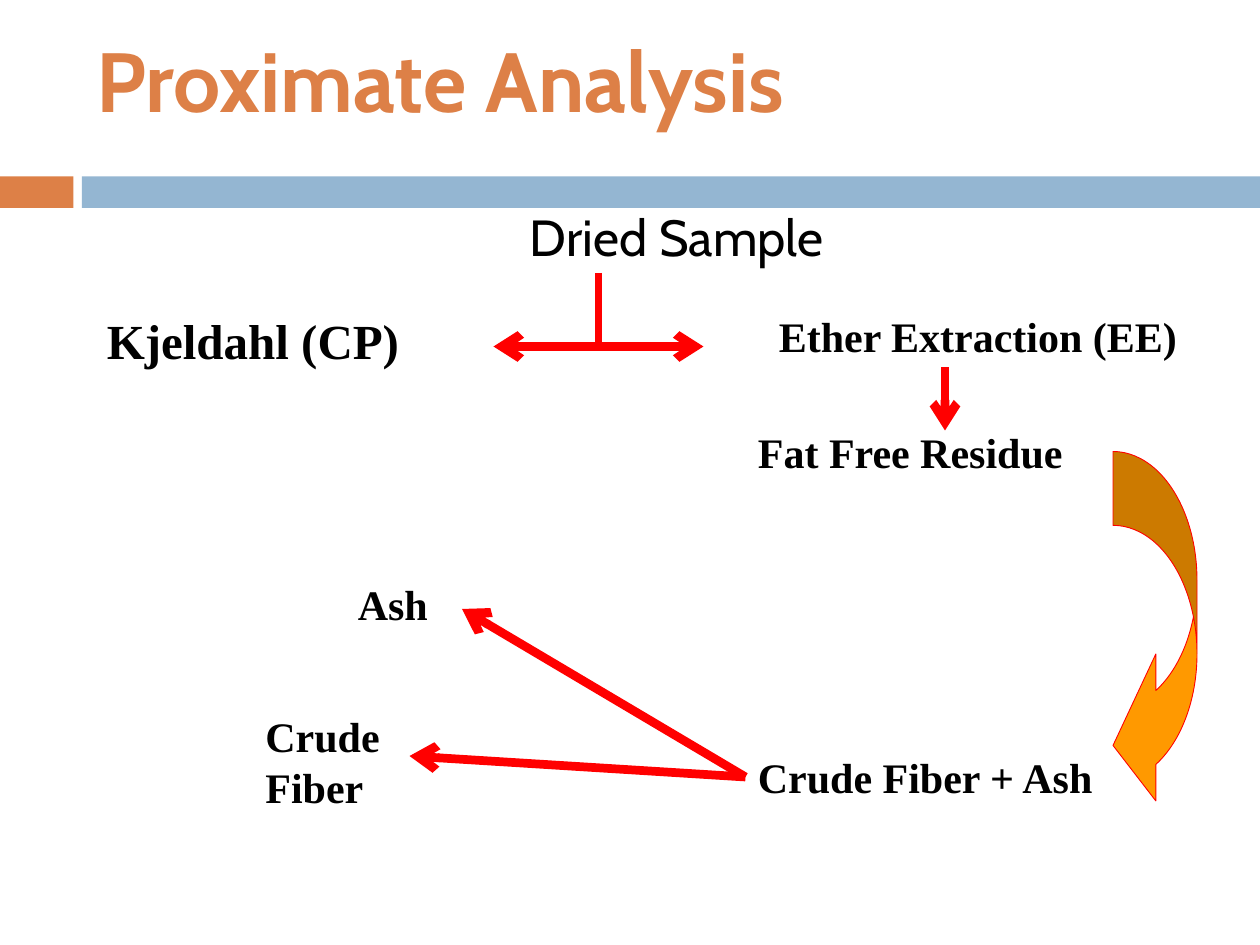
from dataclasses import dataclass

from lxml.etree import SubElement
from pptx import Presentation
from pptx.dml.color import RGBColor
from pptx.enum.shapes import MSO_CONNECTOR, MSO_SHAPE
from pptx.enum.text import MSO_ANCHOR
from pptx.oxml.ns import qn
from pptx.util import Inches, Pt


@dataclass(frozen=True)
class Theme:
    orange: str = "DD8047"
    blue: str = "94B6D2"
    black: str = "000000"
    red: str = "FF0000"
    amber: str = "FF9900"
    heading_font: str = "Cabin"
    label_font: str = "Times New Roman"
    title_size: float = 48
    sample_size: float = 29
    large_label_size: float = 28
    label_size: float = 24
    arrow_width: float = 5
    stem_width: float = 4.5
    outline_width: float = 0.5


THEME = Theme()
COLUMNS, ROWS = 120, 90
CELL = Inches(10) // COLUMNS


def grid(*cells):
    """Convert counts of grid cells to lengths."""
    return [round(cell * CELL) for cell in cells]


def add_text(slide, text, box, size=THEME.label_size, font=THEME.label_font,
             color=THEME.black, bold=True, anchor=MSO_ANCHOR.TOP, indent=0):
    """Add a wrapped text box; box and indent are in grid cells."""
    shape = slide.shapes.add_textbox(*grid(*box))
    frame = shape.text_frame
    frame.word_wrap = True
    frame.vertical_anchor = anchor
    frame.text = text
    paragraph = frame.paragraphs[0]
    if indent:
        paragraph._p.get_or_add_pPr().set("marL", str(grid(indent)[0]))
    run_font = paragraph.runs[0].font
    run_font.name = font
    run_font.size = Pt(size)
    run_font.bold = bold
    run_font.color.rgb = RGBColor.from_string(color)


def add_filled_shape(slide, kind, box, fill, outline=None):
    shape = slide.shapes.add_shape(kind, *grid(*box))
    shape.shadow.inherit = False
    shape.fill.solid()
    shape.fill.fore_color.rgb = RGBColor.from_string(fill)
    if outline:
        shape.line.color.rgb = RGBColor.from_string(outline)
        shape.line.width = Pt(THEME.outline_width)
    else:
        shape.line.fill.background()
    return shape


def add_line(slide, start, end, width=THEME.arrow_width, arrowheads=("tailEnd",)):
    connector = slide.shapes.add_connector(
        MSO_CONNECTOR.STRAIGHT, *grid(*start, *end))
    connector.line.color.rgb = RGBColor.from_string(THEME.red)
    connector.line.width = Pt(width)
    properties = connector._element.spPr
    for arrowhead in arrowheads:
        SubElement(properties.find(qn("a:ln")), qn(f"a:{arrowhead}"), type="arrow")
    SubElement(properties, qn("a:effectLst"))


def add_header(slide):
    add_filled_shape(slide, MSO_SHAPE.RECTANGLE, (0, 16.8, 7, 3), THEME.orange)
    add_filled_shape(slide, MSO_SHAPE.RECTANGLE, (7.8, 16.8, 112.2, 3), THEME.blue)
    add_text(slide, "Proximate Analysis", (8, 0, 102, 15), THEME.title_size,
             THEME.heading_font, THEME.orange, anchor=MSO_ANCHOR.MIDDLE)


def add_labels(slide):
    add_text(slide, "Dried Sample", (9, 19, 102, 9), THEME.sample_size,
             THEME.heading_font, bold=False, indent=40.3)
    add_text(slide, "Kjeldahl (CP)", (9, 29, 40, 6.8), THEME.large_label_size)
    for text, box in (
        ("Ether Extraction (EE)", (73, 29, 47, 10.8)),
        ("Fat Free Residue", (71, 40, 45, 6)),
        ("Crude Fiber + Ash", (71, 71, 44, 6)),
        ("Ash", (32.9, 54.5, 10.8, 6)),
        ("Crude Fiber", (24.1, 67.1, 19, 10.9)),
    ):
        add_text(slide, text, box)


def add_flow(slide):
    add_line(slide, (57, 26), (57, 33), THEME.stem_width, arrowheads=())
    add_line(slide, (47, 33), (67, 33), arrowheads=("headEnd", "tailEnd"))
    add_line(slide, (90, 35), (90, 41))
    curved_arrow = add_filled_shape(slide, MSO_SHAPE.CURVED_LEFT_ARROW,
                                    (106, 43, 8, 35), THEME.amber, THEME.red)
    for index, value in enumerate((0.88, 1.75, 0.51)):
        curved_arrow.adjustments[index] = value
    residue = (71, 74)
    for target in ((44, 58), (39, 72)):
        add_line(slide, residue, target)


def main():
    presentation = Presentation()
    presentation.slide_width = COLUMNS * CELL
    presentation.slide_height = ROWS * CELL
    slide = presentation.slides.add_slide(presentation.slide_layouts[6])
    add_header(slide)
    add_labels(slide)
    add_flow(slide)
    presentation.save("out.pptx")


if __name__ == "__main__":
    main()
